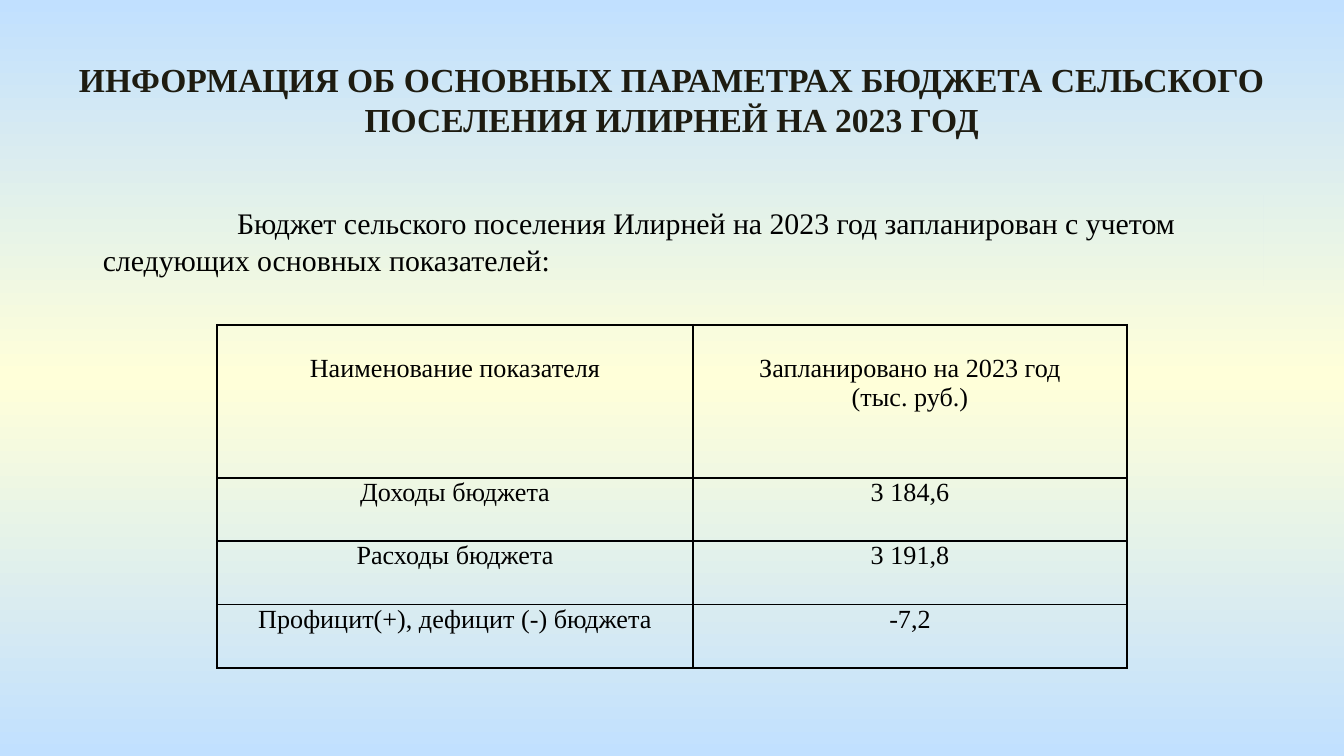
import copy
from dataclasses import dataclass

import lxml.etree
import pptx
import pptx.dml.color
import pptx.enum.shapes
import pptx.enum.text
import pptx.oxml.ns
import pptx.util

Pt = pptx.util.Pt
ALIGN = pptx.enum.text.PP_ALIGN
FONT = "Times New Roman"
COLORS = {"sky": "C1E0FF", "cream": "FFFFD9", "title": "1E1C11", "text": "000000"}


@dataclass
class TextBlock:
    text: str
    left: float
    top: float
    width: float
    height: float
    size: float
    color: str
    bold: bool = False
    align: ALIGN = ALIGN.LEFT


@dataclass
class Row:
    name: str
    value: str
    height: float = 34
    inset_top: float = 0


INTRO = TextBlock("Бюджет сельского поселения Илирней на 2023 год запланирован с учетом "
                  "следующих основных показателей:",
                  48, 105, 629, 48, 16, "text")
TITLE = TextBlock("ИНФОРМАЦИЯ ОБ ОСНОВНЫХ ПАРАМЕТРАХ БЮДЖЕТА СЕЛЬСКОГО "
                  "ПОСЕЛЕНИЯ ИЛИРНЕЙ НА 2023 ГОД",
                  25, 28, 670, 51, 18, "title", bold=True, align=ALIGN.CENTER)
ROWS = [
    Row("Наименование показателя", "Запланировано на 2023 год\n(тыс. руб.)", 82, 16),
    Row("Доходы бюджета", "3 184,6"),
    Row("Расходы бюджета", "3 191,8"),
    Row("Профицит(+), дефицит (-) бюджета", "-7,2", inset_top=0.4),
]
COL_WIDTHS = [255, 232.5]


def rgb(name: str) -> pptx.dml.color.RGBColor:
    return pptx.dml.color.RGBColor.from_string(COLORS[name])


def format_text(tf, size: float, color: str, bold: bool, align: ALIGN) -> None:
    for p in tf.paragraphs:
        p.alignment = align
        for r in p.runs:
            r.font.name = FONT
            r.font.size = Pt(size)
            r.font.bold = bold
            r.font.color.rgb = rgb(color)


def set_background(s) -> None:
    fill = s.background.fill
    fill.gradient()
    fill.gradient_angle = 270
    gs = next(s.element.iter(pptx.oxml.ns.qn("a:gs")))
    gs.addnext(copy.deepcopy(gs))
    for i, (stop, name) in enumerate(zip(fill.gradient_stops, ["sky", "cream", "sky"])):
        stop.position = i / 2
        stop.color.rgb = rgb(name)


def fill_text(sp, block: TextBlock) -> None:
    tf = sp.text_frame
    tf.word_wrap = True
    tf.vertical_anchor = pptx.enum.text.MSO_ANCHOR.TOP
    tf.text = block.text
    format_text(tf, block.size, block.color, block.bold, block.align)


def draw_title(s, block: TextBlock) -> None:
    sp = s.shapes.add_textbox(Pt(block.left), Pt(block.top), Pt(block.width), Pt(block.height))
    fill_text(sp, block)


def draw_intro(s, block: TextBlock) -> None:
    sp = s.shapes.add_shape(pptx.enum.shapes.MSO_SHAPE.RECTANGLE, Pt(block.left),
                            Pt(block.top), Pt(block.width), Pt(block.height))
    sp.shadow.inherit = False
    sp.line.fill.background()
    sp.element.remove(sp.element.find(pptx.oxml.ns.qn("p:style")))
    sp.element.set("useBgFill", "1")
    fill_text(sp, block)
    sp.text_frame.margin_top = Pt(4.2)
    p = sp.text_frame.paragraphs[0]
    p.line_spacing = Pt(19.7)
    p._p.get_or_add_pPr().set("indent", str(Pt(72)))


def add_borders(cell) -> None:
    qn = pptx.oxml.ns.qn
    tcPr = cell._tc.get_or_add_tcPr()
    for side in ("a:lnL", "a:lnR", "a:lnT", "a:lnB"):
        ln = lxml.etree.SubElement(tcPr, qn(side), w=str(Pt(1)))
        fill = lxml.etree.SubElement(ln, qn("a:solidFill"))
        lxml.etree.SubElement(fill, qn("a:srgbClr"), val=COLORS["text"])


def draw_table(s, rows: list[Row], left: float, top: float) -> None:
    table = s.shapes.add_table(len(rows), len(COL_WIDTHS), Pt(left), Pt(top),
                               Pt(sum(COL_WIDTHS)), Pt(sum(r.height for r in rows))).table
    table.first_row = table.horz_banding = False
    for col, width in zip(table.columns, COL_WIDTHS):
        col.width = Pt(width)
    for tr, row in zip(table.rows, rows):
        tr.height = Pt(row.height)
        for cell, text in zip(tr.cells, (row.name, row.value)):
            cell.text_frame.text = text
            cell.margin_left = cell.margin_right = Pt(5)
            cell.margin_top = Pt(row.inset_top)
            cell.margin_bottom = 0
            format_text(cell.text_frame, 14, "text", False, ALIGN.CENTER)
            add_borders(cell)
            cell.fill.background()


def main() -> None:
    prs = pptx.Presentation()
    prs.slide_width, prs.slide_height = Pt(720), Pt(405)
    s = prs.slides.add_slide(prs.slide_layouts[6])
    set_background(s)
    draw_intro(s, INTRO)
    draw_title(s, TITLE)
    draw_table(s, ROWS, 116.3, 174)
    prs.save("out.pptx")


if __name__ == "__main__":
    main()
